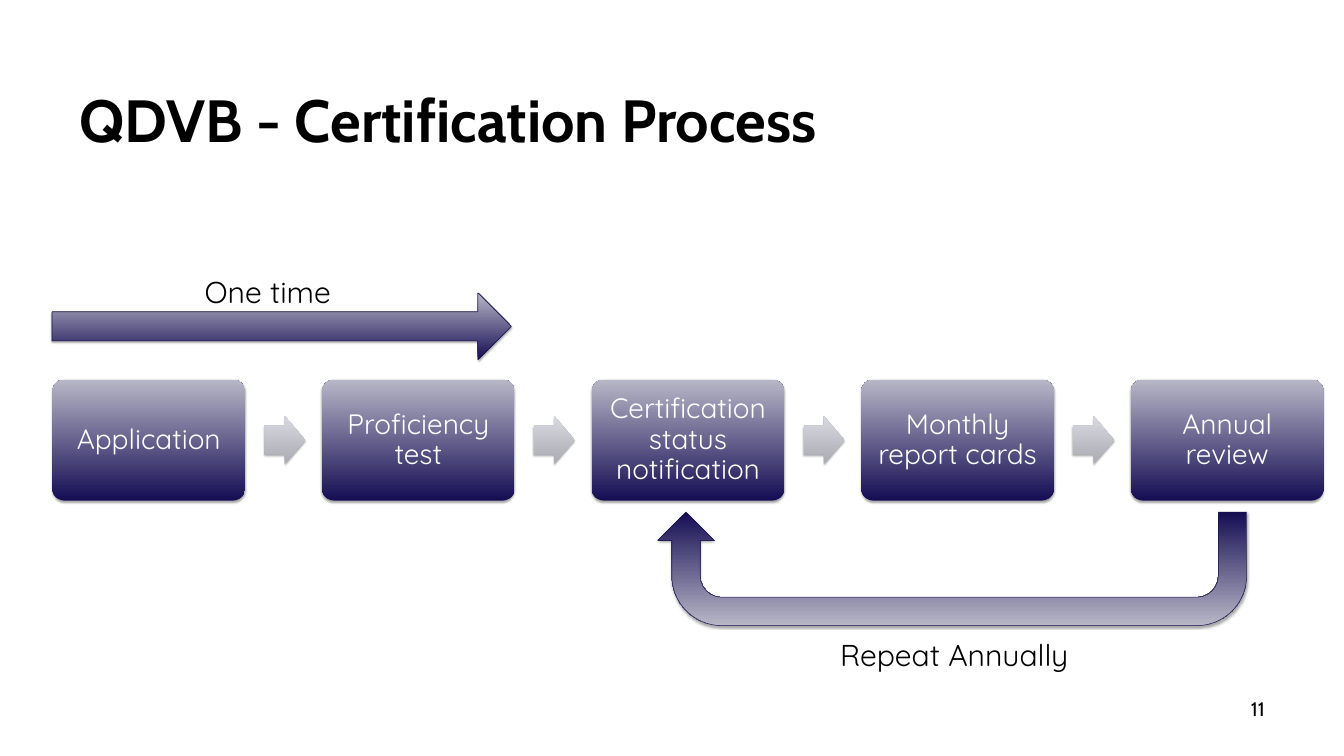
from lxml.etree import SubElement
from pptx import Presentation
from pptx.dml.color import RGBColor
from pptx.enum.shapes import MSO_SHAPE
from pptx.enum.text import MSO_ANCHOR, MSO_AUTO_SIZE, PP_ALIGN
from pptx.oxml.ns import qn
from pptx.util import Cm, Pt

COLORS = {
    "navy": "150D53",
    "lavender": "B8B7C7",
    "outline": "19134B",
    "gray": "ABABB3",
    "pale gray": "D8D8E0",
    "black": "000000",
    "white": "FFFFFF",
}
STEPS = [
    "Application",
    "Proficiency test",
    "Certification status notification",
    "Monthly report cards",
    "Annual review",
]
STEP_LEFT, STEP_TOP, STEP_WIDTH, STEP_HEIGHT = 2.64, 19.13, 9.7, 6.1
STEP_PITCH = 13.58
ARROW_WIDTH, ARROW_HEIGHT = 2.06, 2.41
ARROW_OFFSET = 10.67


def add_gradient_shape(kind, left, top, width, height, adjustments, bottom, top_color, outline=None):
    shape = page.shapes.add_shape(kind, Cm(left), Cm(top), Cm(width), Cm(height))
    for index, value in enumerate(adjustments):
        shape.adjustments[index] = value
    shape.fill.gradient()
    shape.fill.gradient_angle = 90
    for stop, color in zip(shape.fill.gradient_stops, (bottom, top_color)):
        stop.color.rgb = RGBColor.from_string(COLORS[color])
    if outline:
        shape.line.color.rgb = RGBColor.from_string(COLORS[outline])
        shape.line.width = Pt(0.75)
    else:
        shape.line.fill.background()
    shape.shadow.inherit = False
    effects = shape._element.spPr.find(qn("a:effectLst"))
    shadow = SubElement(effects, qn("a:outerShdw"), blurRad=str(Pt(3.1)), dist=str(Pt(1.8)),
                        dir="5400000", rotWithShape="0")
    shade = SubElement(shadow, qn("a:srgbClr"), val=COLORS["black"])
    SubElement(shade, qn("a:alpha"), val="35000")
    return shape


def write(box, text, size, font, color, align, bold=False):
    para = box.text_frame.paragraphs[0]
    para.text = text
    para.alignment = align
    para.font.size = Pt(size)
    para.font.name = font
    para.font.bold = bold
    para.font.color.rgb = RGBColor.from_string(COLORS[color])
    return para


deck = Presentation()
deck.slide_width, deck.slide_height = Cm(67.69), Cm(38.1)
page = deck.slides.add_slide(deck.slide_layouts[5])

title = page.shapes.title
title.left, title.top, title.width, title.height = Cm(3.38), Cm(0.64), Cm(60.91), Cm(7.42)
number = page.shapes.add_textbox(Cm(48.51), Cm(34.7), Cm(15.8), Cm(2.03))
for box, anchor in ((title, MSO_ANCHOR.BOTTOM), (number, MSO_ANCHOR.MIDDLE)):
    frame = box.text_frame
    frame.word_wrap = True
    frame.auto_size = MSO_AUTO_SIZE.NONE
    frame.vertical_anchor = anchor
    frame.margin_left = frame.margin_right = Cm(0.61)
    frame.margin_top = frame.margin_bottom = Cm(0.3)
write(title, "QDVB - Certification Process", 85, "Cabin", "black", PP_ALIGN.LEFT, bold=True)
write(number, "11", 28, "Cabin", "black", PP_ALIGN.RIGHT)

for index, label in enumerate(STEPS):
    left = STEP_LEFT + index * STEP_PITCH
    step = add_gradient_shape(MSO_SHAPE.ROUNDED_RECTANGLE, left, STEP_TOP, STEP_WIDTH, STEP_HEIGHT,
                              [0.1], "navy", "lavender")
    frame = step.text_frame
    frame.word_wrap = True
    frame.vertical_anchor = MSO_ANCHOR.MIDDLE
    frame.margin_left = frame.margin_right = frame.margin_top = frame.margin_bottom = Cm(0.6)
    para = write(step, label, 40, "Quicksand", "white", PP_ALIGN.CENTER)
    para.line_spacing = 0.9
    if index < len(STEPS) - 1:
        add_gradient_shape(MSO_SHAPE.RIGHT_ARROW, left + ARROW_OFFSET,
                           STEP_TOP + (STEP_HEIGHT - ARROW_HEIGHT) / 2, ARROW_WIDTH, ARROW_HEIGHT,
                           [0.6, 0.5], "gray", "pale gray")

repeat_arrow = add_gradient_shape(MSO_SHAPE.U_TURN_ARROW, 33.12, 25.81, 29.67, 5.72,
                                  [0.25, 0.25, 0.25, 0.44, 1], "navy", "lavender", "outline")
for flip in ("flipH", "flipV"):
    repeat_arrow._element.spPr.xfrm.set(flip, "1")
add_gradient_shape(MSO_SHAPE.RIGHT_ARROW, 2.62, 14.76, 23.14, 3.38,
                   [0.43, 0.5], "navy", "lavender", "outline")

for text, left, top, width in (("Repeat Annually", 42.06, 31.95, 12.88), ("One time", 10.06, 13.64, 7.9)):
    caption = page.shapes.add_textbox(Cm(left), Cm(top), Cm(width), Cm(2.08))
    caption.text_frame.word_wrap = False
    caption.text_frame.auto_size = MSO_AUTO_SIZE.SHAPE_TO_FIT_TEXT
    write(caption, text, 43, "Quicksand", "black", PP_ALIGN.LEFT)

deck.save("out.pptx")
